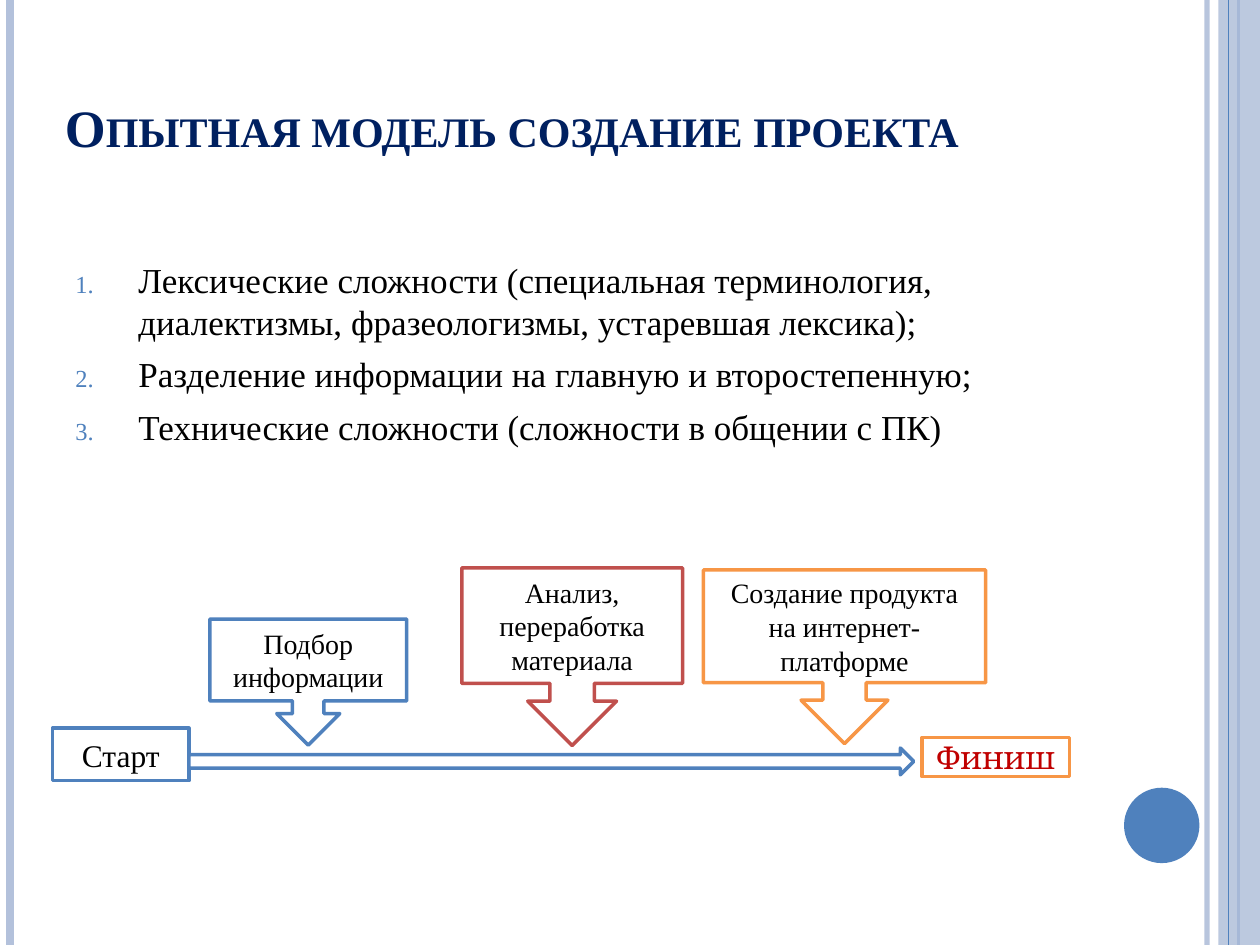
from lxml.etree import SubElement
from pptx import Presentation
from pptx.dml.color import RGBColor
from pptx.enum.shapes import MSO_CONNECTOR, MSO_SHAPE
from pptx.enum.text import MSO_ANCHOR, PP_ALIGN
from pptx.oxml.ns import qn
from pptx.util import Cm, Pt

BLUE = RGBColor(0x4F, 0x81, 0xBD)
PALE_BLUE = RGBColor(0xB3, 0xC1, 0xDB)
NAVY = RGBColor(0x00, 0x20, 0x60)
RED = RGBColor(0xC0, 0x50, 0x4D)
DARK_RED = RGBColor(0xC0, 0x00, 0x00)
ORANGE = RGBColor(0xF7, 0x96, 0x46)
BLACK = RGBColor(0, 0, 0)
WHITE = RGBColor(0xFF, 0xFF, 0xFF)

SERIF = "Times New Roman"
WIDTH, HEIGHT = 25.4, 19.05

TITLE = "Опытная модель создание проекта"
DIFFICULTIES = [
    "Лексические сложности (специальная терминология, диалектизмы, "
    "фразеологизмы, устаревшая лексика);",
    "Разделение информации на главную и второстепенную;",
    "Технические сложности (сложности в общении с ПК)",
]
BACK_RULES = [(24.33, PALE_BLUE, 3, 93), (0.21, PALE_BLUE, 4.5, 100), (24.97, BLUE, 1.5, 100)]
FRONT_RULE = (24.77, BLUE, 0.75, 100)
TIMELINE = [
    (MSO_SHAPE.RECTANGLE, (1.06, 14.68, 2.75, 1.06), BLUE, "Старт", 18, SERIF, BLACK),
    (MSO_SHAPE.RIGHT_ARROW, (3.81, 15.08, 14.61, 0.54), BLUE, "", 18, SERIF, BLACK),
    (MSO_SHAPE.RECTANGLE, (18.59, 14.87, 2.97, 0.79), ORANGE, "Финиш", 18, "Cambria", DARK_RED),
]
STAGES = [
    ((4.23, 12.48, 3.97, 2.54), BLUE, "Подбор информации"),
    ((9.31, 11.45, 4.45, 3.58), RED, "Анализ, переработка материала"),
    ((14.18, 11.49, 5.69, 3.5), ORANGE, "Создание продукта на интернет-платформе"),
]


def set_opacity(fill, percent):
    if percent < 100:
        color = fill.find(".//" + qn("a:srgbClr"))
        SubElement(color, qn("a:alpha"), val=str(percent * 1000))


def add_rule(slide, left, color, width, opacity):
    rule = slide.shapes.add_connector(MSO_CONNECTOR.STRAIGHT, Cm(left), 0, Cm(left), Cm(HEIGHT))
    rule.line.color.rgb = color
    rule.line.width = Pt(width)
    properties = rule._element.spPr
    set_opacity(properties, opacity)
    SubElement(properties, qn("a:effectLst"))


def add_shape(slide, kind, box, fill, outline=None):
    shape = slide.shapes.add_shape(kind, *map(Cm, box))
    shape.shadow.inherit = False
    shape.fill.solid()
    shape.fill.fore_color.rgb = fill
    if outline is None:
        shape.line.fill.background()
    else:
        shape.line.color.rgb = outline
        shape.line.width = Pt(2)
    return shape


def add_run(paragraph, text, size, font_name, color):
    run = paragraph.add_run()
    run.text = text
    run.font.size = Pt(size)
    run.font.name = font_name
    run.font.color.rgb = color
    return run


def add_labelled_shape(slide, kind, box, outline, text, size, font_name, color):
    shape = add_shape(slide, kind, box, WHITE, outline)
    if text:
        shape.text_frame.word_wrap = True
        shape.text_frame.vertical_anchor = MSO_ANCHOR.MIDDLE
        paragraph = shape.text_frame.paragraphs[0]
        paragraph.alignment = PP_ALIGN.CENTER
        add_run(paragraph, text, size, font_name, color)


def add_text_frame(slide, box, anchor):
    frame = slide.shapes.add_textbox(*map(Cm, box)).text_frame
    frame.word_wrap = True
    frame.vertical_anchor = anchor
    return frame


def number_paragraph(paragraph):
    paragraph.space_before = Pt(6)
    properties = paragraph._p.get_or_add_pPr()
    properties.set("marL", str(Cm(1.27)))
    properties.set("indent", str(-Cm(1.27)))
    bullet_color = SubElement(properties, qn("a:buClr"))
    SubElement(bullet_color, qn("a:srgbClr"), val=str(BLUE))
    SubElement(properties, qn("a:buSzPct"), val="70000")
    SubElement(properties, qn("a:buAutoNum"), type="arabicPeriod")


def main():
    presentation = Presentation()
    presentation.slide_width, presentation.slide_height = Cm(WIDTH), Cm(HEIGHT)
    slide = presentation.slides.add_slide(presentation.slide_layouts[6])

    for rule in BACK_RULES:
        add_rule(slide, *rule)
    band = add_shape(slide, MSO_SHAPE.RECTANGLE, (24.56, 0, 0.84, HEIGHT), PALE_BLUE)
    set_opacity(band._element.spPr, 87)
    add_rule(slide, *FRONT_RULE)
    add_shape(slide, MSO_SHAPE.OVAL, (22.66, 15.88, 1.52, 1.52), BLUE)

    title = add_text_frame(slide, (1.06, 1.48, 20.75, 1.83), MSO_ANCHOR.BOTTOM)
    run = add_run(title.paragraphs[0], TITLE, 30, SERIF, NAVY)
    run.font.bold = True
    run.font._element.set("cap", "small")

    body = add_text_frame(slide, (1.27, 5.08, 20.75, 5.08), MSO_ANCHOR.TOP)
    for index, text in enumerate(DIFFICULTIES):
        paragraph = body.add_paragraph() if index else body.paragraphs[0]
        number_paragraph(paragraph)
        add_run(paragraph, text, 20, SERIF, BLACK)

    for item in TIMELINE:
        add_labelled_shape(slide, *item)
    for box, outline, text in STAGES:
        add_labelled_shape(slide, MSO_SHAPE.DOWN_ARROW_CALLOUT, box, outline, text, 16, SERIF, BLACK)

    presentation.save("out.pptx")


if __name__ == "__main__":
    main()
